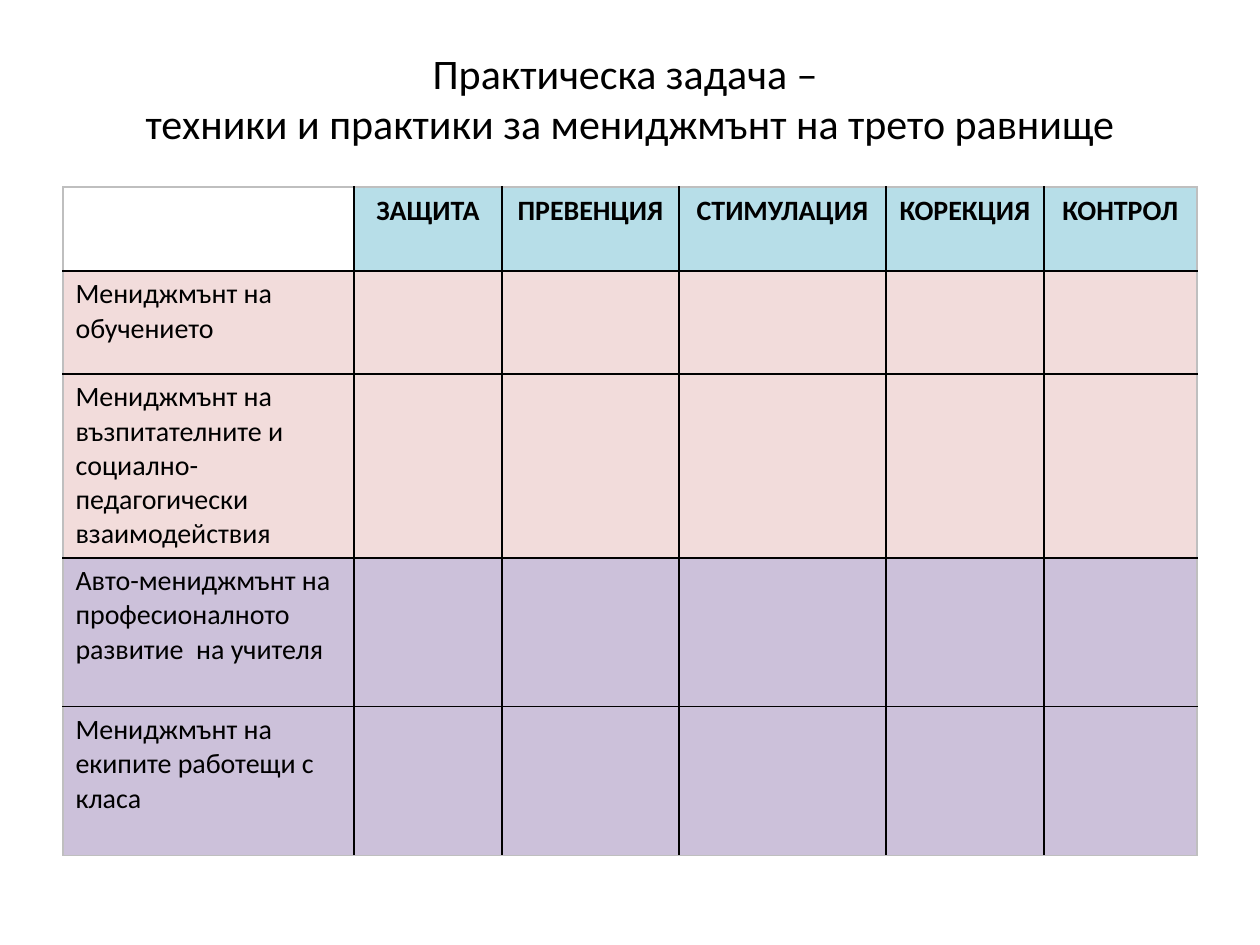
from lxml.etree import SubElement
from pptx import Presentation
from pptx.dml.color import RGBColor
from pptx.enum.text import MSO_ANCHOR, PP_ALIGN
from pptx.oxml.ns import qn
from pptx.util import Emu, Pt

EMU_PER_PX = 914400 / 126
COLUMN_WIDTHS = [291, 148, 177, 207, 158, 153]
ROW_HEIGHTS = [84, 103, 149, 149, 149]
HEADINGS = ["", "ЗАЩИТА", "ПРЕВЕНЦИЯ", "СТИМУЛАЦИЯ", "КОРЕКЦИЯ", "КОНТРОЛ"]
ROWS = [
    ("Мениджмънт на обучението", "F2DCDB"),
    ("Мениджмънт на възпитателните и социално-педагогически взаимодействия", "F2DCDB"),
    ("Авто-мениджмънт на професионалното развитие  на учителя", "CCC1DA"),
    ("Мениджмънт на екипите работещи с класа", "CCC1DA"),
]
HEADING_FILL = "B7DEE8"
INNER_LINE = "000000"
OUTER_LINE = "BFBFBF"
TITLE_FORMAT = {"name": "Calibri", "size": Pt(24), "bold": False}
HEADING_FORMAT = {"name": "Calibri", "size": Pt(16), "bold": True}
LABEL_FORMAT = {"name": "Calibri", "size": Pt(16), "bold": False}


def px(length):
    """Turn pixels into EMU."""
    return Emu(round(length * EMU_PER_PX))


def color(value):
    """Turn a hex string into a colour."""
    return RGBColor.from_string(value)


def place(shape, left, top, width, height):
    """Move and size a shape in pixels."""
    box = {"left": left, "top": top, "width": width, "height": height}
    for name, length in box.items():
        setattr(shape, name, px(length))


def write(text_frame, text, formats, alignment):
    """Write one formatted paragraph."""
    text_frame.text = text
    paragraph = text_frame.paragraphs[0]
    paragraph.alignment = alignment
    for run in paragraph.runs:
        run.font.color.rgb = color("000000")
        for name, value in formats.items():
            setattr(run.font, name, value)


def add_title(slide, text):
    """Fill the title placeholder."""
    title = slide.shapes.title
    place(title, 63, 38, 1134, 120)
    title.text_frame.word_wrap = True
    title.text_frame.vertical_anchor = MSO_ANCHOR.MIDDLE
    write(title.text_frame, text, TITLE_FORMAT, PP_ALIGN.CENTER)


def set_borders(cell, line_colors):
    """Draw the four borders of a cell."""
    properties = cell._tc.get_or_add_tcPr()
    for side, line_color in line_colors.items():
        line = SubElement(properties, qn(f"a:ln{side}"), w=str(Pt(1)))
        fill = SubElement(line, qn("a:solidFill"))
        SubElement(fill, qn("a:srgbClr"), val=line_color)


def format_cell(cell, fill, at_edge):
    """Give a cell its borders and fill."""
    set_borders(cell, {side: OUTER_LINE if outer else INNER_LINE for side, outer in at_edge.items()})
    if fill:
        cell.fill.solid()
        cell.fill.fore_color.rgb = color(fill)
    else:
        cell.fill.background()


def add_matrix(slide):
    """Add the table of management fields and techniques."""
    row_count, column_count = len(ROW_HEIGHTS), len(COLUMN_WIDTHS)
    frame = slide.shapes.add_table(
        row_count, column_count, px(63), px(187), px(sum(COLUMN_WIDTHS)), px(sum(ROW_HEIGHTS))
    )
    table = frame.table
    table.first_row = table.horz_banding = False
    for column, width in zip(table.columns, COLUMN_WIDTHS):
        column.width = px(width)
    for row, height in zip(table.rows, ROW_HEIGHTS):
        row.height = px(height)
    fills = [HEADING_FILL] + [fill for _, fill in ROWS]
    for r in range(row_count):
        for c in range(column_count):
            at_edge = {"L": c == 0, "R": c == column_count - 1, "T": r == 0, "B": r == row_count - 1}
            format_cell(table.cell(r, c), fills[r] if r or c else None, at_edge)
    for c, heading in enumerate(HEADINGS[1:], 1):
        write(table.cell(0, c).text_frame, heading, HEADING_FORMAT, PP_ALIGN.CENTER)
    for r, (label, _) in enumerate(ROWS, 1):
        write(table.cell(r, 0).text_frame, label, LABEL_FORMAT, PP_ALIGN.LEFT)


def main():
    """Build and save the slide."""
    presentation = Presentation()
    presentation.slide_width, presentation.slide_height = px(1260), px(945)
    slide = presentation.slides.add_slide(presentation.slide_layouts[5])
    add_title(slide, "Практическа задача – \vтехники и практики за мениджмънт на трето равнище")
    add_matrix(slide)
    presentation.save("out.pptx")


if __name__ == "__main__":
    main()
